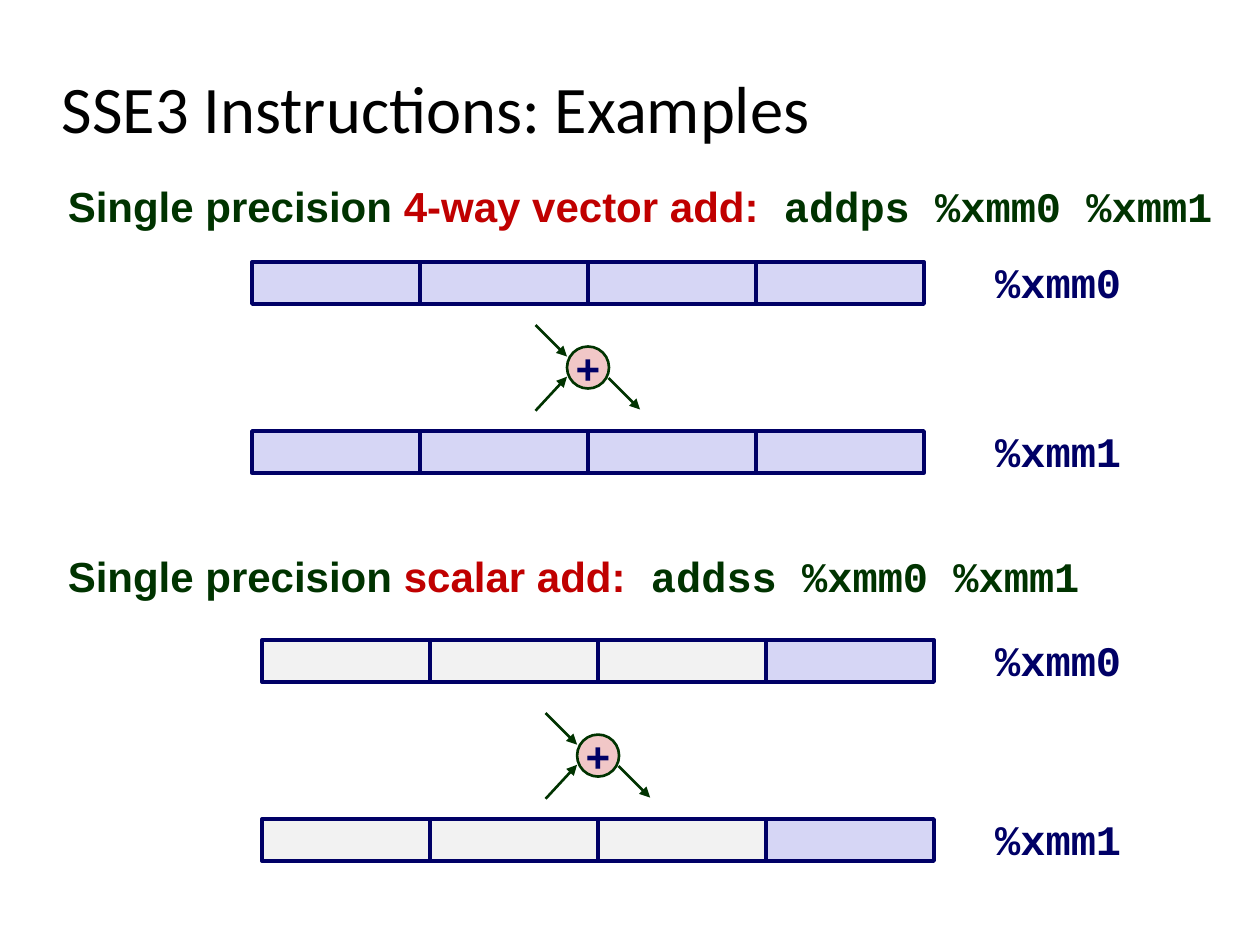
from lxml.etree import SubElement
from pptx import Presentation
from pptx.dml.color import RGBColor
from pptx.enum.shapes import MSO_CONNECTOR, MSO_SHAPE
from pptx.enum.text import MSO_ANCHOR as Anchor, MSO_AUTO_SIZE as AutoSize, PP_ALIGN as Align
from pptx.oxml.ns import qn
from pptx.util import Inches, Pt

NAVY, GREEN, RED, BLACK = "000066", "003300", "C00000", "000000"
ACTIVE, IDLE, PINK = "D6D6F5", "F2F2F2", "F1C7C7"
SANS, MONO = "Arial", "Courier New"
CELL_WIDTH, CELL_HEIGHT = 4 / 3, 1 / 3


def color(value):
    """Turn a hex string into a colour."""
    return RGBColor.from_string(value)


def add_run(paragraph, text, font, text_color, size=24, bold=True):
    """Append a formatted run to a paragraph."""
    run = paragraph.add_run()
    run.text = text
    run.font.name = font
    run.font.size = Pt(size)
    run.font.bold = bold
    run.font.color.rgb = color(text_color)


def add_text_box(slide, left, top, width, height, wrap=True):
    """Add an empty text box and return its text frame."""
    frame = slide.shapes.add_textbox(*map(Inches, (left, top, width, height))).text_frame
    frame.word_wrap = wrap
    return frame


def add_title(slide, text):
    """Add the slide title."""
    frame = add_text_box(slide, 0.39, 0.48, 8.3, 0.83)
    frame.vertical_anchor = Anchor.MIDDLE
    paragraph = frame.paragraphs[0]
    paragraph.line_spacing = 0.87
    add_run(paragraph, text, "Calibri", BLACK, 38, False)


def add_heading(slide, top, operation, instruction):
    """Add a heading that names an operation and its instruction."""
    paragraph = add_text_box(slide, 0.44, top, 9.56, 0.5).paragraphs[0]
    paragraph.line_spacing = 0.95
    add_run(paragraph, "Single precision ", SANS, GREEN)
    add_run(paragraph, f"{operation}:", SANS, RED)
    add_run(paragraph, f" {instruction} %xmm0 %xmm1", MONO, GREEN)


def add_outlined_shape(slide, kind, left, top, width, height, fill, line, weight):
    """Add a filled and outlined shape without a shadow."""
    shape = slide.shapes.add_shape(kind, *map(Inches, (left, top, width, height)))
    shape.shadow.inherit = False
    shape.fill.solid()
    shape.fill.fore_color.rgb = color(fill)
    shape.line.color.rgb = color(line)
    shape.line.width = Pt(weight)
    return shape


def add_register(slide, left, top, name, fills):
    """Add a row of register cells with the register name at the right."""
    for index, fill in enumerate(fills):
        add_outlined_shape(slide, MSO_SHAPE.RECTANGLE, left + index * CELL_WIDTH, top,
                           CELL_WIDTH, CELL_HEIGHT, fill, NAVY, 2)
    frame = add_text_box(slide, 7.8, top - 0.09, 1.2, 0.5, wrap=False)
    frame.auto_size = AutoSize.SHAPE_TO_FIT_TEXT
    add_run(frame.paragraphs[0], name, MONO, NAVY)


def add_arrow(slide, start, end):
    """Add a straight arrow between two points."""
    connector = slide.shapes.add_connector(MSO_CONNECTOR.STRAIGHT, *map(Inches, start + end))
    connector.line.color.rgb = color(GREEN)
    connector.line.width = Pt(1.5)
    SubElement(connector.line._get_or_add_ln(), qn("a:tailEnd"), type="triangle")
    SubElement(connector._element.spPr, qn("a:effectLst"))


def add_adder(slide, left, top):
    """Add a plus node with two input arrows and one output arrow."""
    node = add_outlined_shape(slide, MSO_SHAPE.OVAL, left, top, CELL_HEIGHT, CELL_HEIGHT,
                              PINK, GREEN, 1.5)
    frame = node.text_frame
    frame.word_wrap = False
    frame.vertical_anchor = Anchor.MIDDLE
    frame.margin_left = frame.margin_right = Inches(0.05)
    frame.margin_top = frame.margin_bottom = Inches(0.05)
    paragraph = frame.paragraphs[0]
    paragraph.alignment = Align.CENTER
    add_run(paragraph, "+", MONO, NAVY)
    offsets = [(-0.25, -0.17, 0, 0.08), (-0.25, 0.51, 0, 0.24), (0.33, 0.25, 0.58, 0.5)]
    for x1, y1, x2, y2 in offsets:
        add_arrow(slide, (left + x1, top + y1), (left + x2, top + y2))


def add_example(slide, left, register_tops, adder_top, fills):
    """Add two registers with an adder between them."""
    for index, top in enumerate(register_tops):
        add_register(slide, left, top, f"%xmm{index}", fills)
    add_adder(slide, left + 2.5, adder_top)


def main():
    """Build and save the slide."""
    presentation = Presentation()
    presentation.slide_width, presentation.slide_height = Inches(10), Inches(7.5)
    slide = presentation.slides.add_slide(presentation.slide_layouts[6])
    add_title(slide, "SSE3 Instructions: Examples")
    add_heading(slide, 1.41, "4-way vector add", "addps")
    add_example(slide, 2, (2.08, 3.42), 2.75, [ACTIVE] * 4)
    add_heading(slide, 4.35, "scalar add", "addss")
    add_example(slide, 2.08, (5.08, 6.5), 5.83, [IDLE] * 3 + [ACTIVE])
    presentation.save("out.pptx")


if __name__ == "__main__":
    main()
